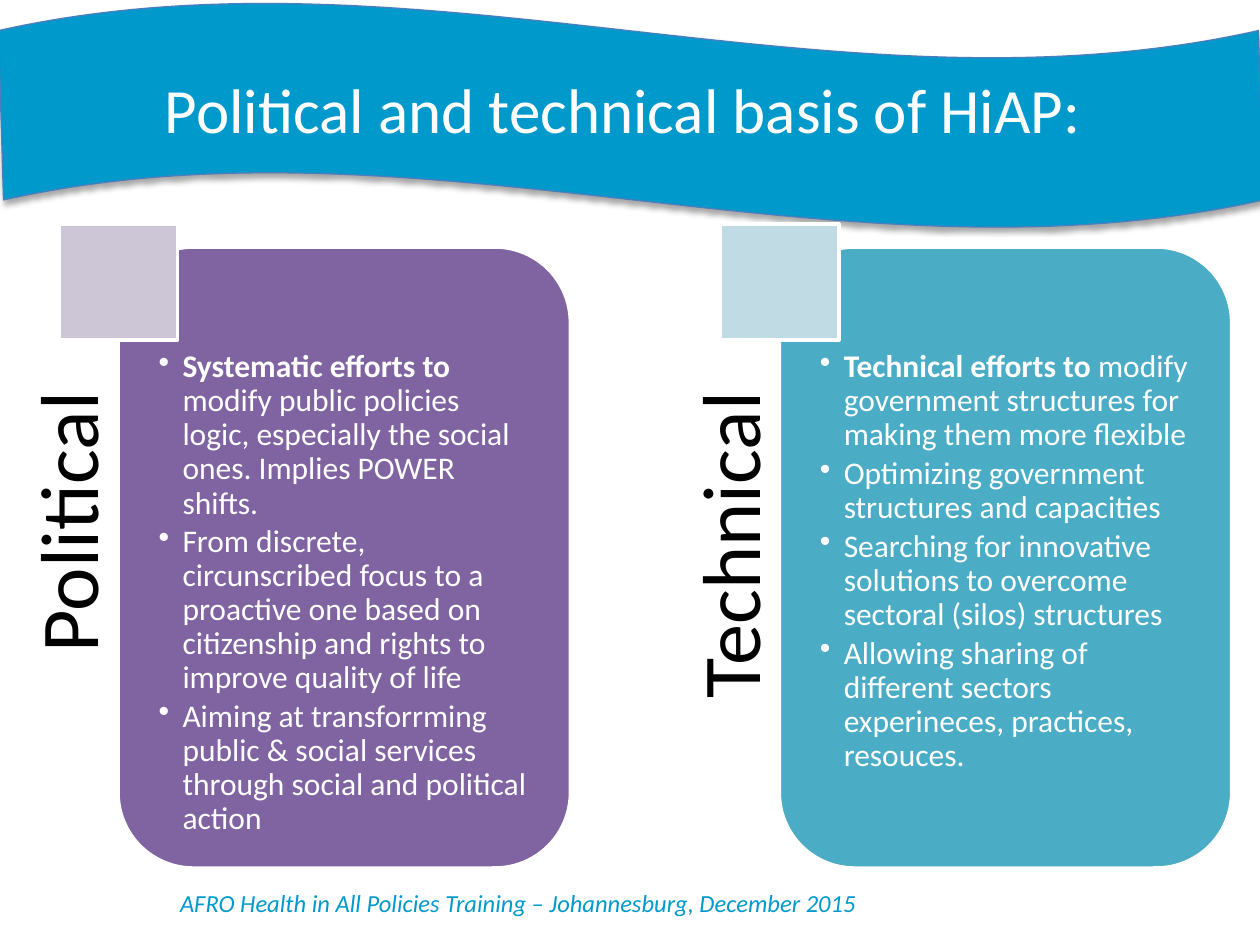
from dataclasses import dataclass

from lxml import etree
from pptx import Presentation
from pptx.dml.color import RGBColor
from pptx.enum import shapes, text
from pptx.oxml import ns
from pptx.util import Cm, Pt


@dataclass(frozen=True)
class Theme:
    font: str = "Calibri"
    banner: str = "0099CC"
    banner_line: str = "4B7EBC"
    light: str = "FFFFFF"
    dark: str = "000000"
    title_size: float = 36
    label_size: float = 47
    body_size: float = 18
    footer_size: float = 14


@dataclass(frozen=True)
class Bullet:
    words: str
    lead: str = ""


@dataclass(frozen=True)
class Column:
    label: str
    fill: str
    tint: str
    bullets: tuple[Bullet, ...]


@dataclass(frozen=True)
class Area:
    left: float
    top: float
    width: float
    height: float

    def lengths(self, shift: float = 0) -> tuple[Cm, Cm, Cm, Cm]:
        return Cm(self.left + shift), Cm(self.top), Cm(self.width), Cm(self.height)


THEME = Theme()
FIRST_COLUMN = 1.19
COLUMN_STEP = 13.33
LABEL = Area(-4.67, 10.31, 9.91, 1.83)
PANEL = Area(1.19, 4.98, 9.12, 12.52)
BODY = Area(1.65, 5.44, 8.23, 11.63)
SQUARE = Area(0, 4.52, 2.39, 2.34)
INDENT = Cm(0.48)

COLUMNS = (
    Column("Political", "8064A2", "CDC6D7", (
        Bullet("modify public policies logic, especially the social ones. Implies POWER shifts.",
               "Systematic efforts to "),
        Bullet("From discrete, circunscribed focus to a proactive one based on "
               "citizenship and rights to improve quality of life"),
        Bullet("Aiming at transforrming public & social services through social "
               "and political action"),
    )),
    Column("Technical", "4BACC6", "C1DBE5", (
        Bullet("modify government structures for making them more flexible",
               "Technical efforts to "),
        Bullet("Optimizing government structures and capacities"),
        Bullet("Searching for innovative solutions to overcome sectoral (silos) structures"),
        Bullet("Allowing sharing of different sectors experineces, practices, resouces."),
    )),
)


def add_span(para, words: str, size: float, color: str, bold: bool = False, italic: bool = False):
    span = para.add_run()
    span.text = words
    span.font.name = THEME.font
    span.font.size = Pt(size)
    span.font.bold = bold
    span.font.italic = italic
    span.font.color.rgb = RGBColor.from_string(color)


def set_frame(box, left: float = 0.25, top: float = 0.13, right: float = 0.25, bottom: float = 0.13):
    frame = box.text_frame
    frame.word_wrap = True
    frame.margin_left, frame.margin_top = Cm(left), Cm(top)
    frame.margin_right, frame.margin_bottom = Cm(right), Cm(bottom)
    return frame


def add_block(page, kind, area: Area, fill: str, line: str, width: float, shift: float = 0):
    block = page.shapes.add_shape(kind, *area.lengths(shift))
    block.shadow.inherit = False
    block.fill.solid()
    block.fill.fore_color.rgb = RGBColor.from_string(fill)
    block.line.color.rgb = RGBColor.from_string(line)
    block.line.width = Pt(width)
    return block


def add_shadow(block) -> None:
    effects = block._element.spPr.find(ns.qn("a:effectLst"))
    shadow = etree.SubElement(effects, ns.qn("a:outerShdw"), blurRad=str(Pt(3.1)),
                              dist=str(Pt(1.8)), dir="5400000", rotWithShape="0")
    color = etree.SubElement(shadow, ns.qn("a:srgbClr"), val=THEME.dark)
    etree.SubElement(color, ns.qn("a:alpha"), val="35000")


def add_banner(page) -> None:
    wave = add_block(page, shapes.MSO_SHAPE.WAVE, Area(-0.03, 0.05, 25.5, 4.55),
                     THEME.banner, THEME.banner_line, 0.75)
    wave.adjustments[0] = 0.125
    wave.adjustments[1] = 0.002
    add_shadow(wave)
    title = page.shapes.title
    title._element.addprevious(wave._element)
    title.left, title.top, title.width, title.height = Area(1.27, 1.07, 22.86, 2.21).lengths()
    frame = set_frame(title)
    frame.vertical_anchor = text.MSO_ANCHOR.MIDDLE
    para = frame.paragraphs[0]
    para.alignment = text.PP_ALIGN.CENTER
    add_span(para, "Political and technical basis of HiAP: ", THEME.title_size, THEME.light)


def add_footer(page) -> None:
    box = page.shapes.add_textbox(*Area(0.2, 17.78, 20.5, 0.86).lengths())
    para = set_frame(box).paragraphs[0]
    para.alignment = text.PP_ALIGN.CENTER
    add_span(para, "AFRO Health in All Policies Training – Johannesburg, December 2015",
             THEME.footer_size, THEME.banner, italic=True)


def add_label(page, words: str, shift: float) -> None:
    box = page.shapes.add_textbox(*LABEL.lengths(shift))
    box.rotation = 270
    para = set_frame(box, 0, 0, 1.63, 0).paragraphs[0]
    para.alignment = text.PP_ALIGN.RIGHT
    para.line_spacing = 0.9
    add_span(para, words, THEME.label_size, THEME.dark)


def add_bullets(page, bullets: tuple[Bullet, ...], shift: float) -> None:
    box = page.shapes.add_textbox(*BODY.lengths(shift))
    frame = set_frame(box, 0.36, 1.63, 0.36, 0.36)
    for index, bullet in enumerate(bullets):
        para = frame.add_paragraph() if index else frame.paragraphs[0]
        para.level = 1
        para.line_spacing = 0.9
        para.space_after = Pt(2.7)
        settings = para._p.get_or_add_pPr()
        settings.set("marL", str(INDENT))
        settings.set("indent", str(-INDENT))
        etree.SubElement(settings, ns.qn("a:buChar"), char="•")
        if bullet.lead:
            add_span(para, bullet.lead, THEME.body_size, THEME.light, bold=True)
        add_span(para, bullet.words, THEME.body_size, THEME.light)


def add_column(page, column: Column, shift: float) -> None:
    add_label(page, column.label, shift)
    add_block(page, shapes.MSO_SHAPE.ROUNDED_RECTANGLE, PANEL, column.fill, THEME.light, 2, shift)
    add_bullets(page, column.bullets, shift)
    add_block(page, shapes.MSO_SHAPE.RECTANGLE, SQUARE, column.tint, THEME.light, 2, shift)


def main() -> None:
    deck = Presentation()
    deck.slide_width, deck.slide_height = Cm(25.4), Cm(19.05)
    page = deck.slides.add_slide(deck.slide_layouts[5])
    add_footer(page)
    add_banner(page)
    for index, column in enumerate(COLUMNS):
        add_column(page, column, FIRST_COLUMN + index * COLUMN_STEP)
    deck.save("out.pptx")


if __name__ == "__main__":
    main()
